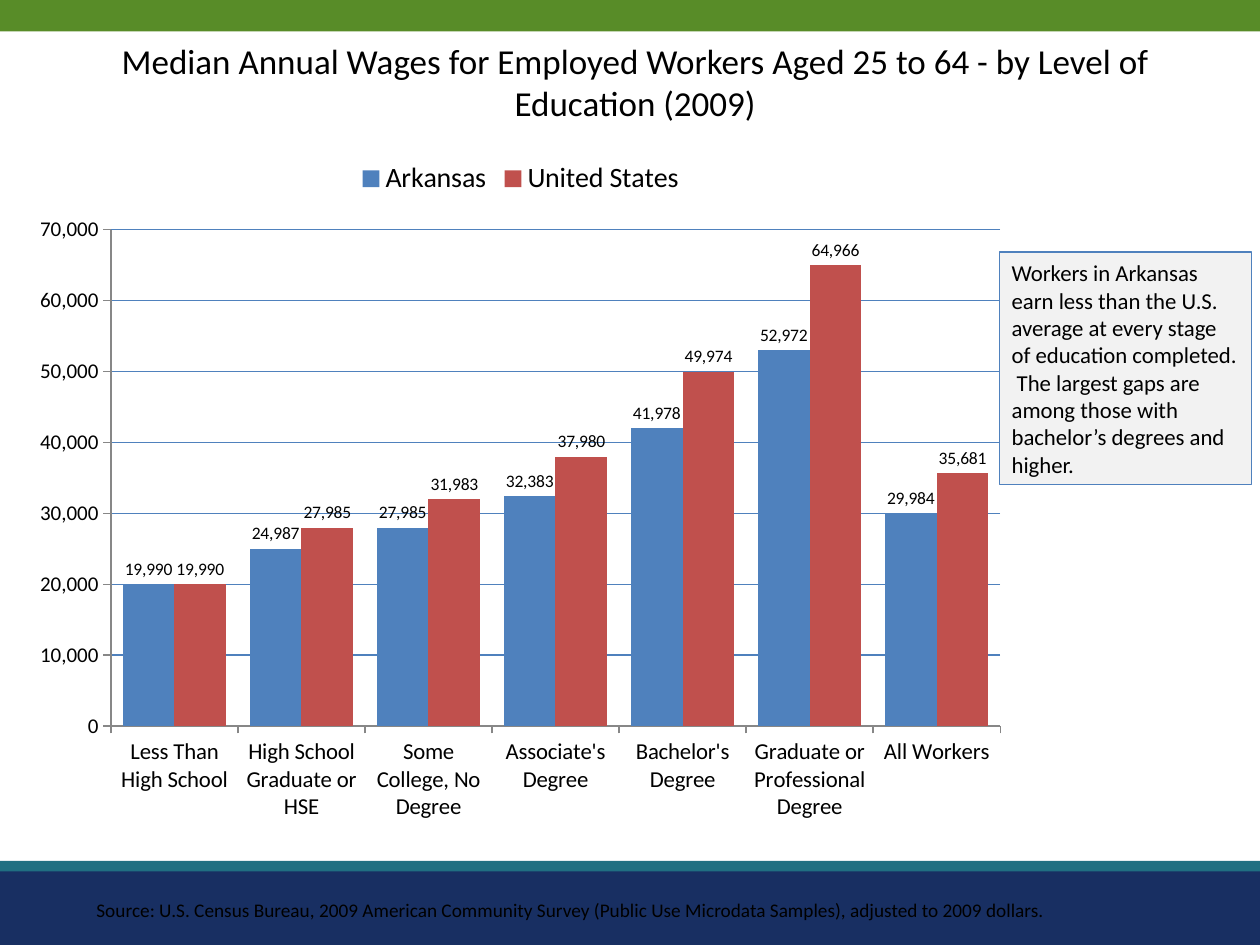
from dataclasses import dataclass

from lxml import etree
from pptx import Presentation
from pptx.chart import data as chart_data
from pptx.dml.color import RGBColor
from pptx.enum import chart as ch
from pptx.enum import shapes, text
from pptx.oxml import ns
from pptx.util import Pt

FONT = "Calibri"
COLORS = {
    "navy": "182F62", "green": "588C28", "teal": "206F82",
    "ink": "000000", "note": "F2F2F2", "axis": "878787",
    "blue": "4F81BD", "red": "C0504D",
}
SLIDE_W, SLIDE_H = 720, 540
FOOTER_TOP = 492


@dataclass
class Box:
    left: float
    top: float
    width: float
    height: float

    def lengths(self):
        return [Pt(n) for n in (self.left, self.top, self.width, self.height)]


@dataclass
class Band:
    box: Box
    color: str


@dataclass
class WageSeries:
    name: str
    color: str
    wages: tuple[int, ...]


BANDS = [
    Band(Box(0, FOOTER_TOP, SLIDE_W, SLIDE_H - FOOTER_TOP), "navy"),
    Band(Box(0, 0, SLIDE_W, 18), "green"),
    Band(Box(0, FOOTER_TOP, SLIDE_W, 6), "teal"),
]
LEVELS = [
    "Less Than High School", "High School Graduate or HSE",
    "Some College, No Degree", "Associate's Degree", "Bachelor's Degree",
    "Graduate or Professional Degree", "All Workers",
]
WAGES = [
    WageSeries("Arkansas", "blue",
               (19990, 24987, 27985, 32383, 41978, 52972, 29984)),
    WageSeries("United States", "red",
               (19990, 27985, 31983, 37980, 49974, 64966, 35681)),
]


def rgb(name: str) -> RGBColor:
    return RGBColor.from_string(COLORS[name])


def style_font(font, size: float) -> None:
    font.name = FONT
    font.size = Pt(size)
    font.bold = False
    font.color.rgb = rgb("ink")


def add_rectangle(slide, box: Box, color: str):
    rectangle = slide.shapes.add_shape(shapes.MSO_SHAPE.RECTANGLE, *box.lengths())
    rectangle.shadow.inherit = False
    rectangle.fill.solid()
    rectangle.fill.fore_color.rgb = rgb(color)
    rectangle.line.fill.background()
    return rectangle


def write(shape, words: str, size: float, align, anchor) -> None:
    frame = shape.text_frame
    frame.word_wrap = True
    frame.auto_size = text.MSO_AUTO_SIZE.NONE
    frame.vertical_anchor = anchor
    frame.text = words
    paragraph = frame.paragraphs[0]
    paragraph.alignment = align
    style_font(paragraph.font, size)


def place_plot(chart, **fractions: float) -> None:
    """Fix the inner plot area as fractions of the chart frame."""
    plot_area = chart.plots[0]._element.getparent()
    for automatic in plot_area.findall(ns.qn("c:layout")):
        plot_area.remove(automatic)
    layout = etree.Element(ns.qn("c:layout"))
    manual = etree.SubElement(layout, ns.qn("c:manualLayout"))
    settings = {"layoutTarget": "inner", "xMode": "edge", "yMode": "edge", **fractions}
    for tag, value in settings.items():
        etree.SubElement(manual, ns.qn(f"c:{tag}")).set("val", str(value))
    plot_area.insert(0, layout)


def style_axis(axis, size: float) -> None:
    style_font(axis.tick_labels.font, size)
    axis.major_tick_mark = ch.XL_TICK_MARK.OUTSIDE
    axis.minor_tick_mark = ch.XL_TICK_MARK.NONE
    axis.format.line.color.rgb = rgb("axis")
    axis.format.line.width = Pt(0.75)


def add_wage_chart(slide, box: Box) -> None:
    wage_data = chart_data.CategoryChartData(number_format="#,##0")
    wage_data.categories = LEVELS
    for group in WAGES:
        wage_data.add_series(group.name, group.wages)
    chart = slide.shapes.add_chart(
        ch.XL_CHART_TYPE.COLUMN_CLUSTERED, *box.lengths(), wage_data).chart
    style_font(chart.font, 10)
    chart.has_title = False
    chart.has_legend = True
    chart.legend.position = ch.XL_LEGEND_POSITION.TOP
    chart.legend.include_in_layout = False
    style_font(chart.legend.font, 16)

    style_axis(chart.category_axis, 13)
    wage_axis = chart.value_axis
    style_axis(wage_axis, 12)
    wage_axis.minimum_scale, wage_axis.maximum_scale = 0, 70000
    wage_axis.major_unit = 10000
    wage_axis.tick_labels.number_format = "#,##0"
    wage_axis.tick_labels.number_format_is_linked = False
    wage_axis.major_gridlines.format.line.color.rgb = rgb("blue")
    wage_axis.major_gridlines.format.line.width = Pt(0.75)

    columns = chart.plots[0]
    columns.gap_width, columns.overlap = 46, 0
    columns.vary_by_categories = False
    for group, series in zip(WAGES, columns.series):
        series.format.fill.solid()
        series.format.fill.fore_color.rgb = rgb(group.color)
        labels = series.data_labels
        labels.show_value = True
        labels.number_format = "#,##0"
        labels.number_format_is_linked = False
        labels.position = ch.XL_LABEL_POSITION.OUTSIDE_END
        style_font(labels.font, 10)
    place_plot(chart, x=0.09, y=0.12, w=0.89, h=0.72)


def main() -> None:
    deck = Presentation()
    deck.slide_width, deck.slide_height = Pt(SLIDE_W), Pt(SLIDE_H)
    slide = deck.slides.add_slide(deck.slide_layouts[5])
    left, center = text.PP_ALIGN.LEFT, text.PP_ALIGN.CENTER
    top, middle = text.MSO_ANCHOR.TOP, text.MSO_ANCHOR.MIDDLE

    for band in BANDS:
        add_rectangle(slide, band.box, band.color)

    title = slide.shapes.title
    title.left, title.top, title.width, title.height = Box(54, 19, 618, 55.5).lengths()
    write(title, "Median Annual Wages for Employed Workers Aged 25 to 64 - "
          "by Level of Education (2009)", 20, center, top)

    source = slide.shapes.add_textbox(*Box(48, 510, 594, 21).lengths())
    write(source, "Source: U.S. Census Bureau, 2009 American Community Survey "
          "(Public Use Microdata Samples), adjusted to 2009 dollars.", 11, left, top)

    add_wage_chart(slide, Box(12, 84, 571, 394))

    note = add_rectangle(slide, Box(571, 144, 144, 133), "note")
    note.line.color.rgb = rgb("blue")
    note.line.width = Pt(0.75)
    write(note, "Workers in Arkansas earn less than the U.S. average at every stage "
          "of education completed.  The largest gaps are among those with "
          "bachelor’s degrees and higher.", 13, left, middle)

    deck.save("out.pptx")


if __name__ == "__main__":
    main()
